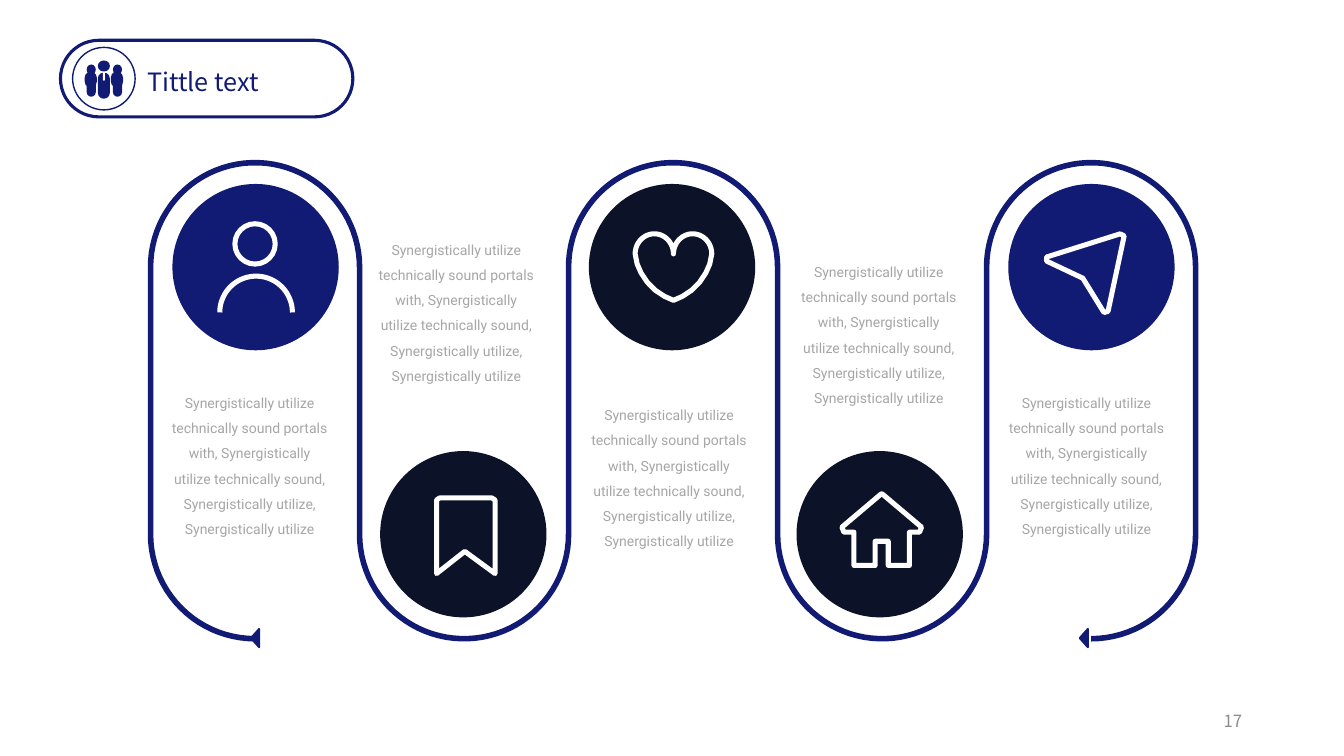
import math
from pptx import Presentation
from pptx import util as u
from pptx.dml.color import RGBColor
from pptx.enum import shapes, text

BLUE = RGBColor(0x12, 0x1B, 0x74)
DARK = RGBColor(0x0C, 0x13, 0x29)
WHITE = RGBColor(0xFF, 0xFF, 0xFF)
GRAY = RGBColor(0xA6, 0xA6, 0xA6)
PALE = RGBColor(0x8C, 0x8C, 0x8C)
OVAL = shapes.MSO_SHAPE.OVAL
ROUND = shapes.MSO_SHAPE.ROUNDED_RECTANGLE
HEAD = "Noto Sans CJK SC"
BODY = ("Synergistically utilize technically sound portals with, "
        "Synergistically utilize technically sound, "
        "Synergistically utilize, Synergistically utilize")

# Grid of the winding track: five columns between two rows of bends
LEFT, PITCH, COLS = 2.53, 2.073, 5
TOP, BASE = 2.65, 5.3
BEND = PITCH / 2
DISC = 1.65


def arc(x, y, wide, high, start, end):
    """Points on an ellipse, angles in degrees, clockwise from the right."""
    steps = max(12, abs(end - start) // 4)
    turns = [math.radians(start + (end - start) * n / steps) for n in range(steps + 1)]
    return [(x + wide * math.cos(t), y + high * math.sin(t)) for t in turns]


def paint(shape, fill, line, width):
    shape.shadow.inherit = False
    if fill is None:
        shape.fill.background()
    else:
        shape.fill.solid()
        shape.fill.fore_color.rgb = fill
    if line is None:
        shape.line.fill.background()
    else:
        shape.line.color.rgb = line
        shape.line.width = u.Pt(width)


deck = Presentation()
deck.slide_width, deck.slide_height = u.Inches(13.33), u.Inches(7.5)
slide = deck.slides.add_slide(deck.slide_layouts[5])

# Title
title = slide.shapes.title
title.left, title.top = u.Inches(1.36), u.Inches(0.61)
title.width, title.height = u.Inches(2.01), u.Inches(0.4)
frame = title.text_frame
frame.text = "Tittle text"
frame.word_wrap = True
frame.auto_size = text.MSO_AUTO_SIZE.NONE
frame.vertical_anchor = text.MSO_ANCHOR.TOP
para = frame.paragraphs[0]
para.alignment = text.PP_ALIGN.LEFT
para.font.size, para.font.name = u.Pt(18), HEAD
para.font.color.rgb = BLUE

# Stops: disc left, text left, text top, disc colour
stops = [
    (1.71, 1.70, 3.83, BLUE),
    (3.77, 3.75, 2.31, DARK),
    (5.84, 5.86, 3.95, DARK),
    (7.90, 7.94, 2.53, DARK),
    (10.0, 10.0, 3.83, BLUE),
]

# Preset shapes: kind, left, top, width, height, fill, line, line width
parts = [(OVAL, disc, (TOP, BASE)[col % 2] - DISC / 2, DISC, DISC, tone, None, 0)
         for col, (disc, _, _, tone) in enumerate(stops)]
parts += [
    (OVAL, 2.33, 2.22, 0.4, 0.4, None, WHITE, 3.6),      # person's head
    (ROUND, 0.6, 0.4, 2.9, 0.76, None, BLUE, 2.25),      # title frame
    (OVAL, 0.72, 0.47, 0.62, 0.62, WHITE, BLUE, 1),      # title badge
    (OVAL, 0.97, 0.6, 0.12, 0.11, BLUE, None, 0),        # team leader
    (ROUND, 0.97, 0.72, 0.12, 0.26, BLUE, None, 0),
    (ROUND, 1.02, 0.71, 0.02, 0.09, WHITE, None, 0),
]
for mate in (0.84, 1.1):                                 # team mates
    parts += [
        (OVAL, mate + 0.02, 0.64, 0.09, 0.1, BLUE, None, 0),
        (ROUND, mate, 0.71, 0.12, 0.16, BLUE, None, 0),
        (ROUND, mate + 0.02, 0.76, 0.09, 0.2, BLUE, None, 0),
    ]
for kind, *box, fill, line, width in parts:
    shape = slide.shapes.add_shape(kind, *map(u.Inches, box))
    if kind == ROUND:
        shape.adjustments[0] = 0.5
    paint(shape, fill, line, width)

# Track: up, over and under each column in turn
track = arc(LEFT, BASE, BEND, BEND, 90, 180)
for col in range(COLS):
    x = LEFT + col * PITCH
    if col % 2:
        track += arc(x, BASE, BEND, BEND, 180, 0)
    else:
        track += arc(x, TOP, BEND, BEND, 180, 360)
track += arc(x, BASE, BEND, BEND, 0, 90)

# Icon outlines
torso = arc(2.54, 3.1, 0.36, 0.36, 180, 360)
mark = [(4.33, 4.96), (4.36, 4.94), (4.88, 4.94), (4.91, 4.96),
        (4.91, 5.69), (4.61, 5.47), (4.33, 5.69)]
side = [(6.32, 2.62), (6.36, 2.71), (6.42, 2.8), (6.5, 2.88), (6.59, 2.94)]
half = arc(6.49, 2.52, 0.19, 0.2, 0, -180) + side
heart = half + [(6.68, 2.98)] + [(2 * 6.68 - x, y) for x, y in reversed(half)]
eaves = [(8.75, 4.9), (9.14, 5.23), (9.12, 5.28), (9.02, 5.28),
         (9.02, 5.61), (8.81, 5.61), (8.81, 5.37)]
house = eaves + [(2 * 8.745 - x, y) for x, y in reversed(eaves)]
plane = [(11.11, 2.32), (11.15, 2.34), (10.99, 3.09), (10.95, 3.1),
         (10.74, 2.76), (10.38, 2.59), (10.38, 2.55)]

# Freeforms: points, closed, fill, line, line width
forms = [(track, False, None, BLUE, 4)]
for tip in (2.49, 10.71):
    head = [(tip, 6.33), (tip + 0.08, 6.24), (tip + 0.08, 6.42)]
    forms.append((head, True, BLUE, BLUE, 1.5))
forms.append((torso, False, None, WHITE, 3.6))
forms += [(icon, True, None, WHITE, 3.6) for icon in (mark, heart, house, plane)]
for points, closed, fill, line, width in forms:
    spots = [(u.Inches(x), u.Inches(y)) for x, y in points]
    form = slide.shapes.build_freeform(*spots[0])
    form.add_line_segments(spots[1:], close=closed)
    paint(form.convert_to_shape(), fill, line, width)

# Column texts and page number: words, box, margin, font, size, colour, align
notes = [(BODY, (left, top, 1.55, 2.23), 0, "Roboto", 10, GRAY, text.PP_ALIGN.CENTER)
         for _, left, top, _ in stops]
notes.append(("17", (9.42, 6.95, 3, 0.4), 0.1, HEAD, 12, PALE, text.PP_ALIGN.RIGHT))
for words, box, pad, font, size, tone, align in notes:
    frame = slide.shapes.add_textbox(*map(u.Inches, box)).text_frame
    frame.text = words
    frame.word_wrap = True
    frame.margin_left = frame.margin_right = u.Inches(pad)
    frame.margin_top = frame.margin_bottom = u.Inches(pad / 2)
    para = frame.paragraphs[0]
    para.alignment = align
    para.font.name, para.font.size = font, u.Pt(size)
    para.font.color.rgb = tone
    if words == BODY:
        para.line_spacing = 1.5
    else:
        frame.vertical_anchor = text.MSO_ANCHOR.MIDDLE

deck.save("out.pptx")
